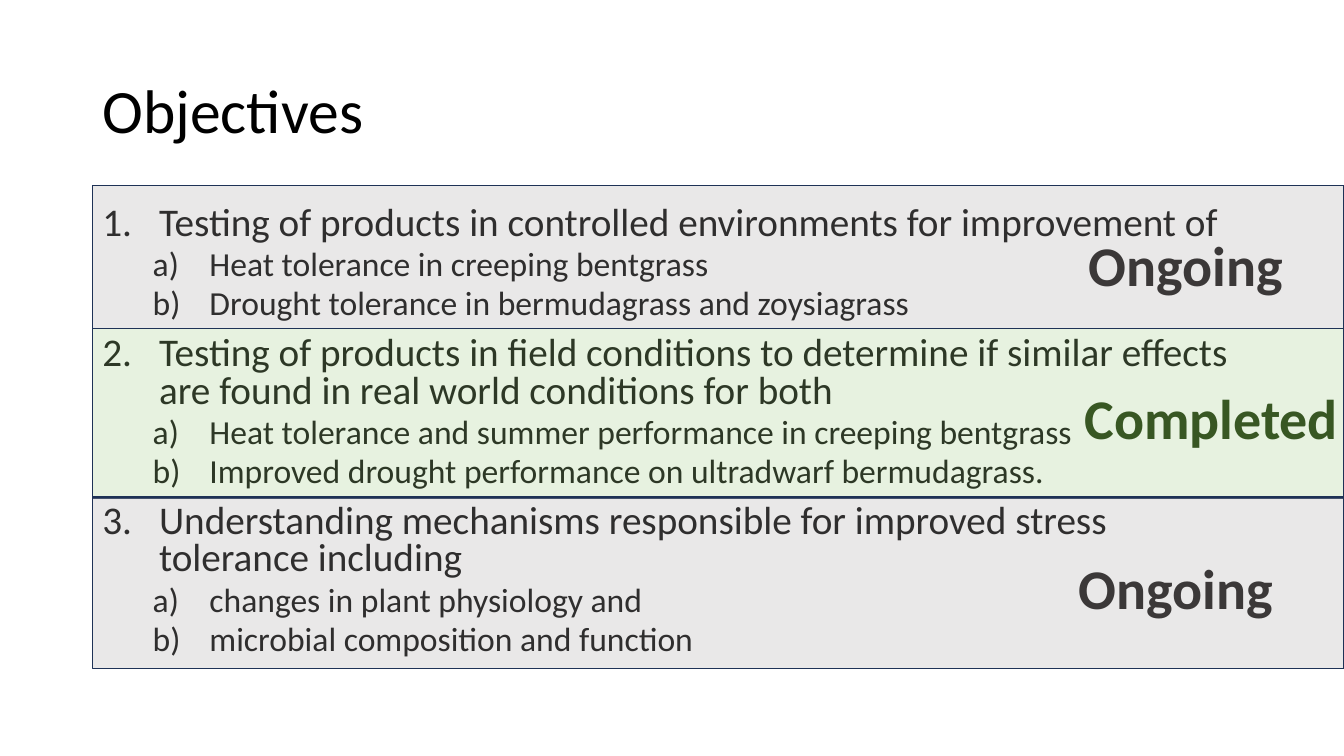
import pptx
import pptx.dml.color
import pptx.enum.shapes
import pptx.enum.text
import pptx.oxml.ns
import pptx.util
from dataclasses import dataclass
from lxml import etree

Cm, Pt = pptx.util.Cm, pptx.util.Pt
RGB = pptx.dml.color.RGBColor.from_string
PP_ALIGN = pptx.enum.text.PP_ALIGN
qn = pptx.oxml.ns.qn


@dataclass(frozen=True)
class Theme:
    font: str = "Calibri"
    text: str = "000000"
    border: str = "1E3256"
    grey: str = "AFABAB"
    green: str = "A9D18E"
    dark_grey: str = "3B3838"
    dark_green: str = "385723"
    title: int = 44
    status: int = 40
    objective: int = 28
    detail: int = 24
    band_opacity: int = 27


theme = Theme()

OBJECTIVES = [
    ("Testing of products in controlled environments for improvement of",
     ["Heat tolerance in creeping bentgrass",
      "Drought tolerance in bermudagrass and zoysiagrass"]),
    ("Testing of products in field conditions to determine if similar effects "
     "are found in real world conditions for both",
     ["Heat tolerance and summer performance in creeping bentgrass",
      "Improved drought performance on ultradwarf bermudagrass."]),
    ("Understanding mechanisms responsible for improved stress tolerance including",
     ["changes in plant physiology and",
      "microbial composition and function"]),
]

# status, band top, band height, label left, label top, band colour, label colour
BANDS = [
    ("Completed", 8.28, 4.29, 25.43, 9.53, theme.green, theme.dark_green),
    ("Ongoing", 4.67, 3.61, 24.79, 5.69, theme.grey, theme.dark_grey),
    ("Ongoing", 12.52, 4.32, 24.54, 13.82, theme.grey, theme.dark_grey),
]
LEFT, TEXT_W, BAND_W = Cm(2.33), Cm(29.21), Cm(31.54)


def set_font(p, size, color, bold=False):
    p.font.name = theme.font
    p.font.size = Pt(size)
    p.font.bold = bold
    p.font.color.rgb = RGB(color)


def add_numbered(tf, text, level):
    """Append a paragraph numbered 1. at level 0 or a) at level 1."""
    p = tf.paragraphs[0] if not tf.text else tf.add_paragraph()
    p.text = text
    p.level = level
    p.line_spacing = 0.8
    p.space_before = Pt((10, 5)[level])
    set_font(p, (theme.objective, theme.detail)[level], theme.text)
    pPr = p._p.get_or_add_pPr()
    pPr.set("marL", str(Cm((1.43, 2.7)[level])))
    pPr.set("indent", str(-Cm(1.43)))
    number = etree.Element(qn("a:buAutoNum"), type=("arabicPeriod", "alphaLcParenR")[level])
    pPr.find(qn("a:spcBef")).addnext(number)


prs = pptx.Presentation()
prs.slide_width, prs.slide_height = Cm(33.87), Cm(19.05)
s = prs.slides.add_slide(prs.slide_layouts[5])

title = s.shapes.title
title.left, title.top, title.width, title.height = LEFT, Cm(1.01), TEXT_W, Cm(3.68)
tf = title.text_frame
tf.text = "Objectives"
tf.auto_size = pptx.enum.text.MSO_AUTO_SIZE.NONE
tf.vertical_anchor = pptx.enum.text.MSO_ANCHOR.MIDDLE
p = tf.paragraphs[0]
p.alignment = PP_ALIGN.LEFT
p.line_spacing = 0.9
set_font(p, theme.title, theme.text)

tf = s.shapes.add_textbox(LEFT, Cm(5.07), TEXT_W, Cm(12.09)).text_frame
tf.word_wrap = True
for objective, details in OBJECTIVES:
    add_numbered(tf, objective, 0)
    for detail in details:
        add_numbered(tf, detail, 1)

for status, top, height, label_left, label_top, band_color, label_color in BANDS:
    band = s.shapes.add_shape(pptx.enum.shapes.MSO_SHAPE.RECTANGLE,
                              LEFT, Cm(top), BAND_W, Cm(height))
    band.shadow.inherit = False
    band.fill.solid()
    band.fill.fore_color.rgb = RGB(band_color)
    fill = band._element.spPr.find(qn("a:solidFill"))
    etree.SubElement(fill[0], qn("a:alpha"), val=str(theme.band_opacity * 1000))
    band.line.color.rgb = RGB(theme.border)
    band.line.width = Pt(1)

    label = s.shapes.add_textbox(Cm(label_left), Cm(label_top), Cm(10.19), Cm(1.96))
    tf = label.text_frame
    tf.word_wrap = True
    tf.text = status
    p = tf.paragraphs[0]
    p.alignment = PP_ALIGN.CENTER
    set_font(p, theme.status, label_color, bold=True)

prs.save("out.pptx")
